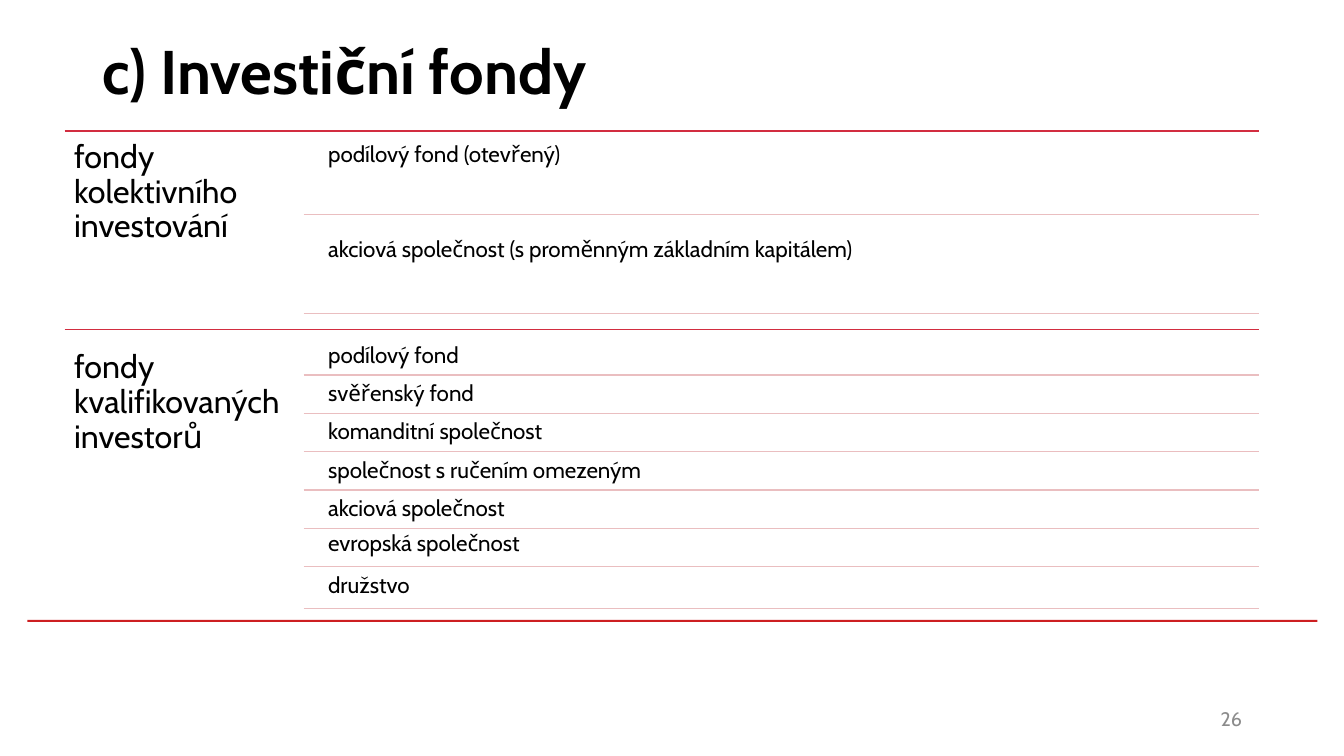
from dataclasses import dataclass

import pptx
import pptx.dml.color
import pptx.enum.shapes
import pptx.enum.text
import pptx.oxml.ns
import pptx.util
from lxml import etree

Cm = pptx.util.Cm
Align = pptx.enum.text.PP_ALIGN
Anchor = pptx.enum.text.MSO_ANCHOR


@dataclass(frozen=True)
class Theme:
    font: str = "Cabin"
    ink: str = "000000"
    muted: str = "8C8C8C"
    footer_rule: str = "CD1F21"
    group_rule: str = "D22D40"
    entry_rule: str = "EABEC0"
    title_size: int = 44
    group_size: int = 23
    entry_size: int = 16
    number_size: int = 14


@dataclass(frozen=True)
class Box:
    left: float
    top: float
    width: float
    height: float


@dataclass(frozen=True)
class Entry:
    text: str
    top: float
    height: float
    rule: float


@dataclass(frozen=True)
class FundGroup:
    name: str
    rule: float
    top: float
    height: float
    entries: tuple[Entry, ...]


THEME = Theme()
LEFT, RIGHT = 1.63, 31.72
GROUP_WIDTH = 6.02
ENTRY_LEFT = 8.1
ENTRY_RULE_LEFT = LEFT + GROUP_WIDTH
ROW_PITCH = 0.965

QUALIFIED = (
    "podílový fond", "svěřenský fond", "komanditní společnost",
    "společnost s ručením omezeným", "akciová společnost",
    "evropská společnost", "družstvo",
)
TEXT_NUDGES = {"evropská společnost": -0.08}
RULE_NUDGES = {"družstvo": 0.1}

GROUPS = (
    FundGroup("fondy kolektivního investování", 3.3, 3.3, 3.2, (
        Entry("podílový fond (otevřený)", 3.45, 2.82, 5.41),
        Entry("akciová společnost (s proměnným základním kapitálem)", 5.82, 2.82, 7.9),
    )),
    FundGroup("fondy kvalifikovaných investorů", 8.31, 8.61, 6.05, tuple(
        Entry(name,
              8.5 + i * ROW_PITCH + TEXT_NUDGES.get(name, 0),
              0.81,
              9.45 + i * ROW_PITCH + RULE_NUDGES.get(name, 0))
        for i, name in enumerate(QUALIFIED)
    )),
)


def rgb(color: str) -> pptx.dml.color.RGBColor:
    return pptx.dml.color.RGBColor.from_string(color)


def format_text(sp, text: str, size: int, color: str, bold: bool = False,
                align=Align.LEFT, anchor=Anchor.TOP) -> None:
    tf = sp.text_frame
    tf.text = text
    tf.word_wrap = True
    tf.auto_size = pptx.enum.text.MSO_AUTO_SIZE.NONE
    tf.vertical_anchor = anchor
    p = tf.paragraphs[0]
    p.alignment = align
    p.line_spacing = 0.9
    font = p.runs[0].font
    font.name = THEME.font
    font.size = pptx.util.Pt(size)
    font.bold = bold
    font.color.rgb = rgb(color)


def add_text(s, box: Box, inset: float):
    sp = s.shapes.add_textbox(Cm(box.left), Cm(box.top), Cm(box.width), Cm(box.height))
    tf = sp.text_frame
    tf.margin_left = tf.margin_right = tf.margin_top = tf.margin_bottom = Cm(inset)
    return sp


def add_rule(s, left: float, top: float, color: str) -> None:
    line = s.shapes.add_connector(pptx.enum.shapes.MSO_CONNECTOR.STRAIGHT,
                                  Cm(left), Cm(top), Cm(RIGHT), Cm(top))
    line.line.color.rgb = rgb(color)
    line.line.width = pptx.util.Pt(1)
    etree.SubElement(line._element.spPr, pptx.oxml.ns.qn("a:effectLst"))


def add_group(s, group: FundGroup) -> None:
    add_rule(s, LEFT, group.rule, THEME.group_rule)
    sp = add_text(s, Box(LEFT, group.top, GROUP_WIDTH, group.height), 0.24)
    format_text(sp, group.name, THEME.group_size, THEME.ink)
    for entry in group.entries:
        box = Box(ENTRY_LEFT, entry.top, RIGHT - ENTRY_LEFT, entry.height)
        format_text(add_text(s, box, 0.17), entry.text, THEME.entry_size, THEME.ink)
        add_rule(s, ENTRY_RULE_LEFT, entry.rule, THEME.entry_rule)


def add_footer(s) -> None:
    sp = s.shapes.add_shape(pptx.enum.shapes.MSO_SHAPE.RECTANGLE,
                            Cm(0.69), Cm(15.62), Cm(32.51), Cm(0.05))
    sp.shadow.inherit = False
    sp.fill.solid()
    sp.fill.fore_color.rgb = rgb(THEME.footer_rule)
    sp.line.fill.background()
    number = add_text(s, Box(23.93, 17.65, 7.62, 1.02), 0.25)
    format_text(number, "26", THEME.number_size, THEME.muted,
                align=Align.RIGHT, anchor=Anchor.MIDDLE)


def add_title(s) -> None:
    title = s.shapes.title
    title.left, title.top, title.width, title.height = Cm(2.34), Cm(0.05), Cm(29.21), Cm(3.68)
    format_text(title, "c) Investiční fondy", THEME.title_size, THEME.ink,
                bold=True, anchor=Anchor.MIDDLE)


def main() -> None:
    prs = pptx.Presentation()
    prs.slide_width, prs.slide_height = Cm(33.87), Cm(19.05)
    s = prs.slides.add_slide(prs.slide_layouts.get_by_name("Title Only"))
    add_title(s)
    add_footer(s)
    for group in GROUPS:
        add_group(s, group)
    prs.save("out.pptx")


if __name__ == "__main__":
    main()
